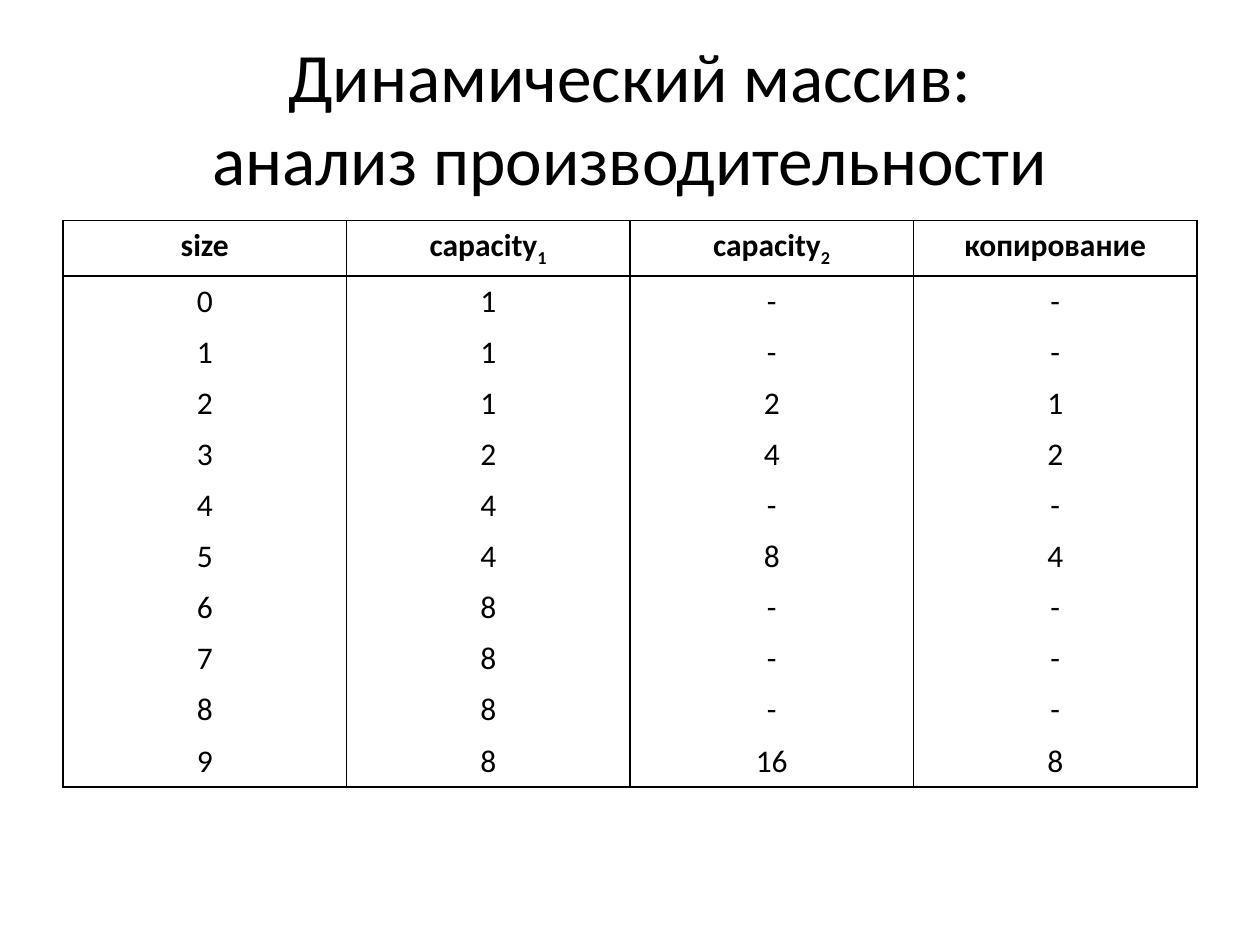
"""Build a slide with a table analysing the cost of growing a dynamic array."""
from dataclasses import dataclass

import pptx
import pptx.dml.color
import pptx.enum.text
import pptx.oxml
import pptx.oxml.ns
import pptx.util
from pptx.util import Inches

FONT = "Calibri"
BLACK = "000000"
BORDER_WIDTH = pptx.util.Pt(1)


@dataclass(frozen=True)
class Heading:
    text: str
    subscript: str = ""


@dataclass(frozen=True)
class Step:
    size: str
    old_capacity: str
    new_capacity: str
    copies: str

    def values(self) -> list[str]:
        return [self.size, self.old_capacity, self.new_capacity, self.copies]


HEADINGS = [
    Heading("size"),
    Heading("capacity", "1"),
    Heading("capacity", "2"),
    Heading("копирование"),
]
STEPS = [
    Step("0", "1", "-", "-"),
    Step("1", "1", "-", "-"),
    Step("2", "1", "2", "1"),
    Step("3", "2", "4", "2"),
    Step("4", "4", "-", "-"),
    Step("5", "4", "8", "4"),
    Step("6", "8", "-", "-"),
    Step("7", "8", "-", "-"),
    Step("8", "8", "-", "-"),
    Step("9", "8", "16", "8"),
]


def color(value: str) -> pptx.dml.color.RGBColor:
    return pptx.dml.color.RGBColor.from_string(value)


def format_paragraph(paragraph, size: float, bold: bool = False) -> None:
    paragraph.alignment = pptx.enum.text.PP_ALIGN.CENTER
    for run in paragraph.runs:
        run.font.name = FONT
        run.font.size = pptx.util.Pt(size)
        run.font.bold = bold
        run.font.color.rgb = color(BLACK)


def set_borders(cell, sides: str) -> None:
    properties = cell._tc.get_or_add_tcPr()
    namespace = pptx.oxml.ns.nsdecls("a")
    solid = f'<a:solidFill><a:srgbClr val="{BLACK}"/></a:solidFill>'
    for position, side in enumerate("LRTB"):
        line_fill = solid if side in sides else "<a:noFill/>"
        line = pptx.oxml.parse_xml(
            f'<a:ln{side} {namespace} w="{BORDER_WIDTH}">{line_fill}</a:ln{side}>'
        )
        properties.insert(position, line)


def add_title(slide, text: str) -> None:
    shape = slide.shapes.add_textbox(Inches(0.5), Inches(0.3), Inches(9), Inches(1.25))
    text_frame = shape.text_frame
    text_frame.word_wrap = True
    text_frame.auto_size = pptx.enum.text.MSO_AUTO_SIZE.NONE
    text_frame.vertical_anchor = pptx.enum.text.MSO_ANCHOR.MIDDLE
    text_frame.text = text
    format_paragraph(text_frame.paragraphs[0], 39.6)


def fill_cell(cell, heading: Heading, sides: str, bold: bool) -> None:
    cell.fill.background()
    set_borders(cell, sides)
    paragraph = cell.text_frame.paragraphs[0]
    paragraph.text = heading.text
    if heading.subscript:
        subscript = paragraph.add_run()
        subscript.text = heading.subscript
        subscript.font._element.set("baseline", "-25000")
    format_paragraph(paragraph, 18, bold)


def add_growth_table(slide, headings: list[Heading], steps: list[Step]) -> None:
    rows = [headings] + [[Heading(value) for value in step.values()] for step in steps]
    table = slide.shapes.add_table(
        len(rows), len(headings), Inches(0.5), Inches(1.75), Inches(9), Inches(4.46)
    ).table
    table.first_row = False
    table.horz_banding = False
    for row_index, row in enumerate(rows):
        sides = "LR"
        if row_index <= 1:
            sides += "T"
        if row_index in (0, len(rows) - 1):
            sides += "B"
        for column_index, heading in enumerate(row):
            fill_cell(table.cell(row_index, column_index), heading, sides, row_index == 0)


def main() -> None:
    presentation = pptx.Presentation()
    presentation.slide_width = Inches(10)
    presentation.slide_height = Inches(7.5)
    slide = presentation.slides.add_slide(presentation.slide_layouts[6])
    add_title(slide, "Динамический массив:\vанализ производительности")
    add_growth_table(slide, HEADINGS, STEPS)
    presentation.save("out.pptx")


if __name__ == "__main__":
    main()
